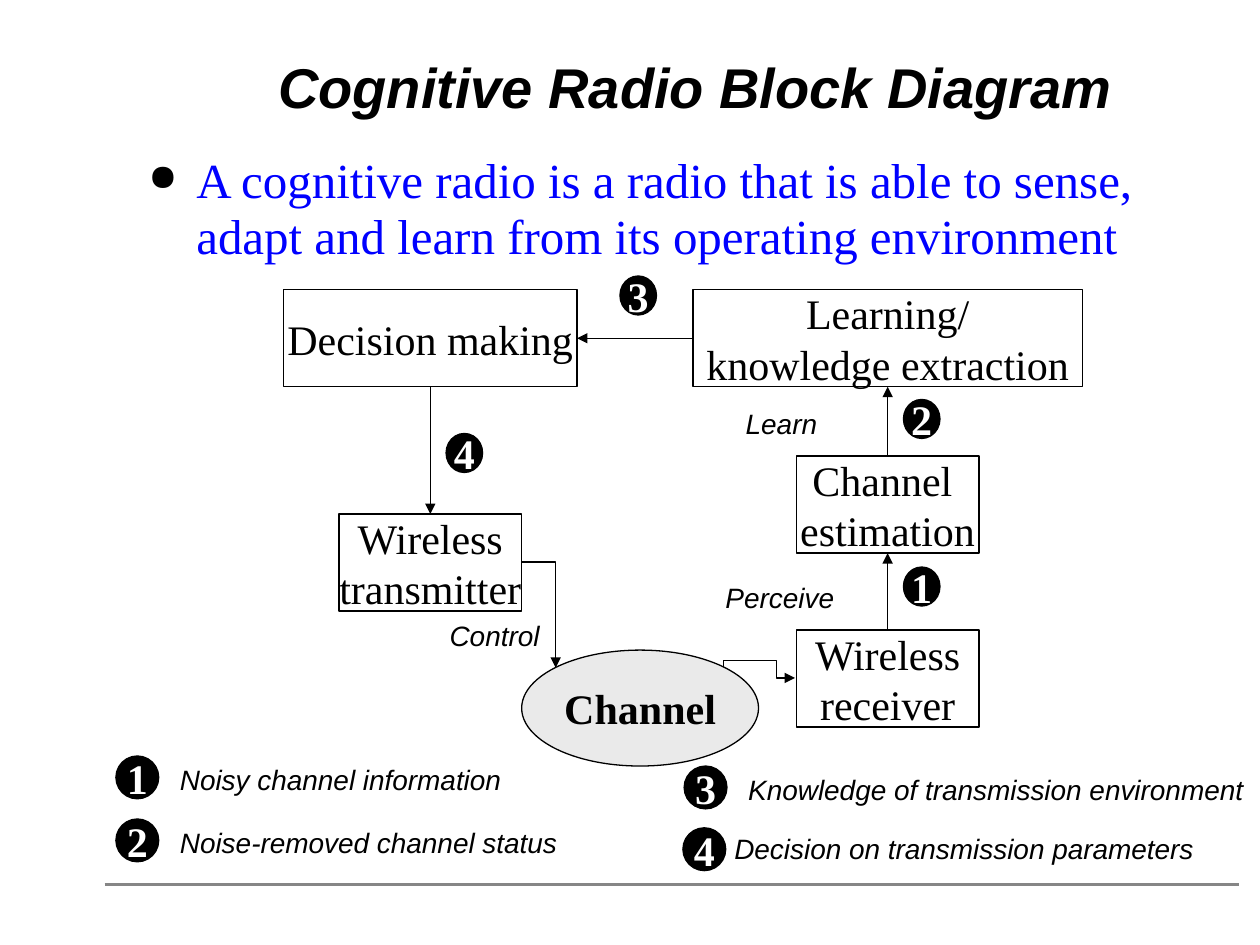
from typing import NamedTuple

from lxml.etree import SubElement
from pptx import Presentation
from pptx.dml.color import RGBColor
from pptx.enum.shapes import MSO_CONNECTOR as Link, MSO_SHAPE as Shape
from pptx.enum.text import MSO_ANCHOR as Anchor, MSO_AUTO_SIZE as AutoSize, PP_ALIGN as Align
from pptx.oxml.ns import qn
from pptx.util import Emu, Pt

SCALE = 9144  # EMU per px, 100 px to the inch
BLACK, WHITE, BLUE, GREY, PALE = "000000", "FFFFFF", "0000FF", "868686", "EAEAEA"

TITLE = dict(name="Arial", size=Pt(32), bold=True, italic=True)
BODY = dict(name="Times New Roman", size=Pt(28))
BLOCK = dict(name="Times New Roman", size=Pt(24))
STRONG = dict(BLOCK, bold=True)
LABEL = dict(name="Arial", size=Pt(16), italic=True)


class Block(NamedTuple):
    key: str
    text: str
    left: int
    top: int
    width: int
    height: int = 77


class Badge(NamedTuple):
    number: str
    left: int
    top: int
    width: int
    height: int


class Label(NamedTuple):
    text: str
    left: int
    top: int
    width: int


class Arrow(NamedTuple):
    source: str
    source_side: int
    target: str
    target_side: int


BLOCKS = [
    Block("decision", "Decision making", 225, 230, 233),
    Block("learning", "Learning/\nknowledge extraction", 550, 230, 309),
    Block("estimation", "Channel \nestimation", 632, 362, 145),
    Block("transmitter", "Wireless\ntransmitter", 269, 408, 145),
    Block("receiver", "Wireless\nreceiver", 632, 500, 145),
]
ARROWS = [
    Arrow("learning", 1, "decision", 3),
    Arrow("decision", 2, "transmitter", 0),
    Arrow("estimation", 0, "learning", 2),
    Arrow("receiver", 0, "estimation", 2),
]
STEP_BADGES = [
    Badge(number, left, top, 29, 31)
    for number, left, top in [("1", 717, 450), ("2", 717, 317), ("3", 492, 219), ("4", 354, 344)]
]
LEGEND_BADGES = [
    Badge(number, left, top, 34, 34)
    for number, left, top in [("1", 92, 600), ("2", 92, 650), ("3", 543, 608), ("4", 542, 657)]
]
LABELS = [
    Label("Noisy channel information", 133, 600, 276),
    Label("Noise-removed channel status", 133, 650, 320),
    Label("Knowledge of transmission environment", 584, 608, 414),
    Label("Decision on transmission parameters", 573, 655, 386),
    Label("Control", 347, 486, 92),
    Label("Perceive", 566, 456, 107),
    Label("Learn", 582, 318, 77),
]


def px(*lengths: int) -> list[Emu]:
    return [Emu(length * SCALE) for length in lengths]


def rgb(value: str) -> RGBColor:
    return RGBColor.from_string(value)


def write(shape, text: str, style: dict, color: str, align=Align.LEFT, **frame_format) -> None:
    frame = shape.text_frame
    frame.text = text
    for name, value in frame_format.items():
        setattr(frame, name, value)
    for paragraph in frame.paragraphs:
        paragraph.alignment = align
        for run in paragraph.runs:
            for name, value in style.items():
                setattr(run.font, name, value)
            run.font.color.rgb = rgb(color)


def draw_shape(slide, kind, box, fill: str, text: str, style: dict, color: str):
    shape = slide.shapes.add_shape(kind, *px(*box))
    shape.shadow.inherit = False
    shape.fill.solid()
    shape.fill.fore_color.rgb = rgb(fill)
    shape.line.color.rgb = rgb(BLACK)
    shape.line.width = Pt(0.75)
    write(shape, text, style, color, Align.CENTER,
          word_wrap=False, vertical_anchor=Anchor.MIDDLE)
    return shape


def draw_badge(slide, badge: Badge) -> None:
    draw_shape(slide, Shape.OVAL, badge[1:], BLACK, badge.number, STRONG, WHITE)


def draw_label(slide, label: Label) -> None:
    box = slide.shapes.add_textbox(*px(label.left, label.top, label.width, 37))
    write(box, label.text, LABEL, BLACK, word_wrap=False, auto_size=AutoSize.SHAPE_TO_FIT_TEXT)


def draw_line(slide, kind, ends, color: str = BLACK, width: float = 0.75, arrow: bool = True):
    line = slide.shapes.add_connector(kind, *px(*ends))
    line.line.color.rgb = rgb(color)
    line.line.width = Pt(width)
    if arrow:
        SubElement(line.line._get_or_add_ln(), qn("a:tailEnd"), type="triangle")
    SubElement(line._element.spPr, qn("a:effectLst"))
    return line


def draw_arrow(slide, arrow: Arrow, shapes: dict) -> None:
    line = draw_line(slide, Link.STRAIGHT, (0, 0, 0, 0))
    line.begin_connect(shapes[arrow.source], arrow.source_side)
    line.end_connect(shapes[arrow.target], arrow.target_side)


def draw_elbow(slide, ends, preset: str, turn: int = 0, adjustments: tuple = ()) -> None:
    properties = draw_line(slide, Link.ELBOW, ends)._element.spPr
    if turn:
        properties.find(qn("a:xfrm")).set("rot", str(turn * 60000))
    geometry = properties.find(qn("a:prstGeom"))
    geometry.set("prst", preset)
    guides = geometry.find(qn("a:avLst"))
    for number, value in enumerate(adjustments, 1):
        SubElement(guides, qn("a:gd"), name=f"adj{number}", fmla=f"val {value}")


def add_bullet(paragraph) -> None:
    properties = paragraph._p.get_or_add_pPr()
    indent = 38 * SCALE
    properties.set("marL", str(indent))
    properties.set("indent", str(-indent))
    SubElement(SubElement(properties, qn("a:buClr")), qn("a:srgbClr"), val=BLACK)
    SubElement(properties, qn("a:buSzPct"), val="75000")
    SubElement(properties, qn("a:buChar"), char="●")


def main() -> None:
    deck = Presentation()
    deck.slide_width, deck.slide_height = px(1000, 750)
    slide = deck.slides.add_slide(deck.slide_layouts[6])

    # Footer rule, title and definition
    draw_line(slide, Link.STRAIGHT, (83, 702, 983, 702), GREY, 2.25, arrow=False)
    title = slide.shapes.add_textbox(*px(126, 23, 852, 77))
    write(title, "Cognitive Radio Block Diagram", TITLE, BLACK, Align.CENTER,
          word_wrap=True, vertical_anchor=Anchor.BOTTOM)
    title.text_frame.paragraphs[0].line_spacing = 0.85
    definition = slide.shapes.add_textbox(*px(108, 117, 812, 504))
    write(definition, "A cognitive radio is a radio that is able to sense, "
          "adapt and learn from its operating environment", BODY, BLUE, word_wrap=True)
    sentence = definition.text_frame.paragraphs[0]
    sentence.line_spacing = 0.95
    add_bullet(sentence)

    # Blocks and the channel
    shapes = {
        block.key: draw_shape(slide, Shape.RECTANGLE, block[2:], WHITE, block.text, BLOCK, BLACK)
        for block in BLOCKS
    }
    draw_shape(slide, Shape.OVAL, (414, 516, 188, 92), PALE, "Channel", STRONG, BLACK)

    # Signal flow
    for arrow in ARROWS:
        draw_arrow(slide, arrow, shapes)
    draw_elbow(slide, (414, 446, 441, 530), "bentConnector2")
    draw_elbow(slide, (607, 505, 598, 562), "bentConnector4", 270, (-55900, 74100))

    # Step numbers, legend and captions
    for badge in STEP_BADGES + LEGEND_BADGES:
        draw_badge(slide, badge)
    for label in LABELS:
        draw_label(slide, label)

    deck.save("out.pptx")


if __name__ == "__main__":
    main()
